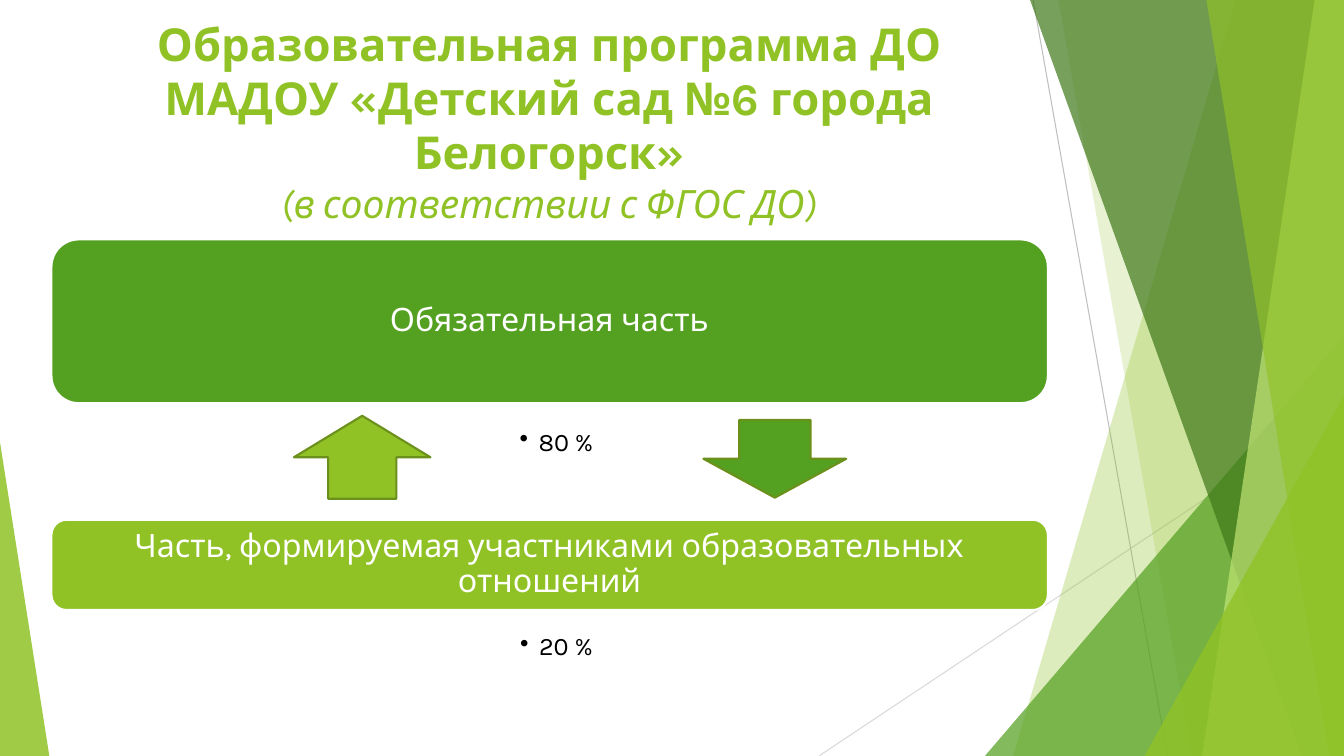
"""Build a slide on the two parts of a kindergarten education programme."""
from dataclasses import dataclass

from lxml import etree
from pptx import Presentation
from pptx import util as u
from pptx.dml.color import RGBColor
from pptx.enum import shapes, text
from pptx.oxml import ns

SCALE = 9525
WIDTH, HEIGHT = 1280, 720
FONT = "Karla"
COLOURS = {
    "lime": "90C226",
    "green": "54A021",
    "forest": "3F7819",
    "pale": "C0E474",
    "olive": "6B901C",
    "silver": "D9D9D9",
    "grey": "BFBFBF",
    "white": "FFFFFF",
    "black": "000000",
}
RIGHT_EDGE = ((WIDTH, HEIGHT), (WIDTH, 0))


@dataclass(frozen=True)
class Ray:
    start: tuple[int, int]
    end: tuple[int, int]
    colour: str


@dataclass(frozen=True)
class Facet:
    points: tuple[tuple[int, int], ...]
    colour: str
    opacity: int


@dataclass(frozen=True)
class Box:
    left: int
    top: int
    width: int
    height: int

    def emu(self) -> list[int]:
        return [px(side) for side in (self.left, self.top, self.width, self.height)]


@dataclass(frozen=True)
class Block:
    kind: shapes.MSO_SHAPE
    box: Box
    colour: str
    outline: str
    label: str = ""


@dataclass(frozen=True)
class Share:
    box: Box
    label: str


@dataclass(frozen=True)
class Heading:
    label: str
    size: float
    bold: bool
    italic: bool


RAYS = (
    Ray((780, HEIGHT), (WIDTH, 387), "silver"),
    Ray((984, 0), (1112, HEIGHT), "grey"),
)
FACETS = (
    Facet(((1177, 0), (965, HEIGHT), *RIGHT_EDGE), "lime", 30),
    Facet(((1008, 0), (1135, HEIGHT), *RIGHT_EDGE), "lime", 20),
    Facet(((938, HEIGHT), (WIDTH, 320), (WIDTH, HEIGHT)), "green", 72),
    Facet(((981, 0), (1240, HEIGHT), *RIGHT_EDGE), "forest", 70),
    Facet(((1252, 0), (1145, HEIGHT), *RIGHT_EDGE), "pale", 70),
    Facet(((1149, 0), (1266, HEIGHT), *RIGHT_EDGE), "lime", 65),
    Facet(((1090, HEIGHT), (WIDTH, 377), (WIDTH, HEIGHT)), "lime", 80),
    Facet(((0, 421), (47, HEIGHT), (0, HEIGHT)), "lime", 85),
)
TITLE_BOX = Box(72, 10, 902, 214)
HEADINGS = (
    Heading("Образовательная программа ДО\vМАДОУ «Детский сад №6 города Белогорск»", 32.4, True, False),
    Heading("(в соответствии с ФГОС ДО)", 27.9, False, True),
)
BLOCKS = (
    Block(shapes.MSO_SHAPE.ROUNDED_RECTANGLE, Box(49, 228, 949, 156), "green", "white",
          "Обязательная часть"),
    Block(shapes.MSO_SHAPE.ROUNDED_RECTANGLE, Box(49, 495, 949, 86), "lime", "white",
          "Часть, формируемая участниками образовательных отношений"),
    Block(shapes.MSO_SHAPE.UP_ARROW, Box(280, 396, 130, 79), "lime", "olive"),
    Block(shapes.MSO_SHAPE.DOWN_ARROW, Box(670, 400, 136, 74), "green", "olive"),
)
SHARES = (
    Share(Box(49, 406, 949, 89), "80 %"),
    Share(Box(49, 601, 949, 64), "20 %"),
)


def px(length: int) -> int:
    return length * SCALE


def rgb(colour: str) -> RGBColor:
    return RGBColor.from_string(COLOURS[colour])


def draw_ray(slide, ray: Ray) -> None:
    line = slide.shapes.add_connector(
        shapes.MSO_CONNECTOR.STRAIGHT, *map(px, ray.start + ray.end))
    line.line.color.rgb = rgb(ray.colour)
    line.line.width = u.Pt(0.75)
    etree.SubElement(line._element.spPr, ns.qn("a:effectLst"))


def draw_facet(slide, facet: Facet) -> None:
    outline = slide.shapes.build_freeform(*facet.points[0], scale=SCALE)
    outline.add_line_segments(facet.points[1:], close=True)
    facet_shape = outline.convert_to_shape()
    facet_shape.shadow.inherit = False
    facet_shape.fill.solid()
    facet_shape.fill.fore_color.rgb = rgb(facet.colour)
    colour = next(facet_shape._element.spPr.iter(ns.qn("a:srgbClr")))
    etree.SubElement(colour, ns.qn("a:alpha"), val=str(facet.opacity * 1000))
    facet_shape.line.fill.background()


def set_frame(frame, insets: tuple[int, int, int, int], anchor: text.MSO_ANCHOR) -> None:
    frame.word_wrap = True
    frame.vertical_anchor = anchor
    (frame.margin_left, frame.margin_top,
     frame.margin_right, frame.margin_bottom) = map(px, insets)


def write(paragraph, label: str, size: float, colour: str, spacing: float = 1.0) -> None:
    paragraph.text = label
    paragraph.alignment = text.PP_ALIGN.CENTER
    paragraph.line_spacing = spacing
    paragraph.font.name = FONT
    paragraph.font.size = u.Pt(size)
    paragraph.font.color.rgb = rgb(colour)


def draw_title(slide) -> None:
    frame = slide.shapes.add_textbox(*TITLE_BOX.emu()).text_frame
    set_frame(frame, (10, 5, 10, 5), text.MSO_ANCHOR.TOP)
    for index, heading in enumerate(HEADINGS):
        paragraph = frame.add_paragraph() if index else frame.paragraphs[0]
        write(paragraph, heading.label, heading.size, "lime")
        paragraph.font.bold = heading.bold
        paragraph.font.italic = heading.italic


def draw_block(slide, block: Block) -> None:
    body = slide.shapes.add_shape(block.kind, *block.box.emu())
    body.shadow.inherit = False
    body.fill.solid()
    body.fill.fore_color.rgb = rgb(block.colour)
    body.line.color.rgb = rgb(block.outline)
    body.line.width = u.Pt(1.5)
    if block.label:
        set_frame(body.text_frame, (10, 10, 10, 10), text.MSO_ANCHOR.MIDDLE)
        write(body.text_frame.paragraphs[0], block.label, 23, "white", 0.9)


def draw_share(slide, share: Share) -> None:
    frame = slide.shapes.add_textbox(*share.box.emu()).text_frame
    set_frame(frame, (30, 3, 17, 3), text.MSO_ANCHOR.TOP)
    paragraph = frame.paragraphs[0]
    write(paragraph, share.label, 18, "black", 0.9)
    properties = paragraph._p.get_or_add_pPr()
    properties.set("marL", str(px(18)))
    properties.set("indent", str(px(-18)))
    bullet = etree.Element(ns.qn("a:buChar"), char="•")
    properties.find(ns.qn("a:defRPr")).addprevious(bullet)


def main() -> None:
    deck = Presentation()
    deck.slide_width, deck.slide_height = px(WIDTH), px(HEIGHT)
    slide = deck.slides.add_slide(deck.slide_layouts[6])
    for ray in RAYS:
        draw_ray(slide, ray)
    for facet in FACETS:
        draw_facet(slide, facet)
    draw_title(slide)
    for block in BLOCKS:
        draw_block(slide, block)
    for share in SHARES:
        draw_share(slide, share)
    deck.save("out.pptx")


if __name__ == "__main__":
    main()
